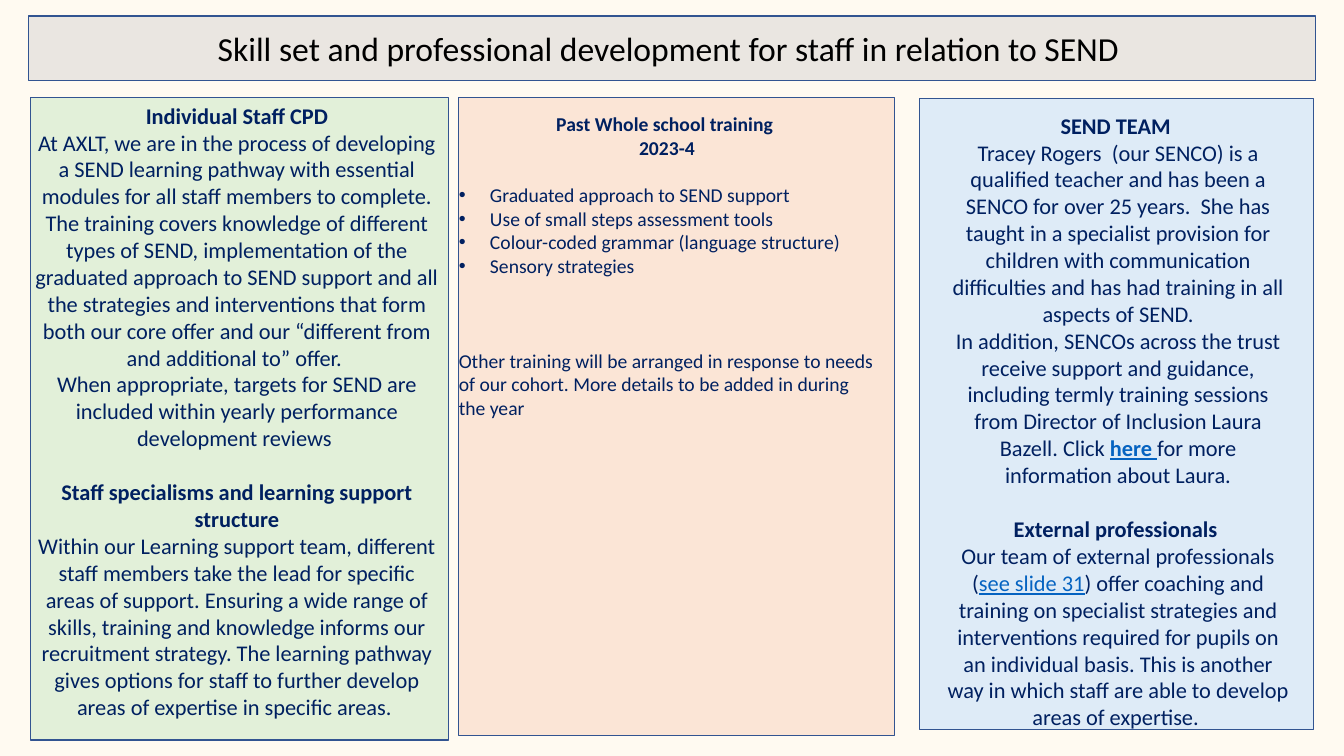
"""Build the SEND staff skills and professional development slide."""
from dataclasses import dataclass

from lxml.etree import SubElement
from pptx import Presentation
from pptx.dml.color import RGBColor as RGB
from pptx.enum.text import MSO_ANCHOR as Anchor, MSO_AUTO_SIZE as AutoSize, PP_ALIGN as Align
from pptx.oxml.ns import qn
from pptx.util import Inches, Pt


@dataclass(frozen=True)
class Theme:
    font: str = "Calibri"
    page: str = "FFFAF1"
    banner: str = "D0CECE"
    banner_alpha: int = 44
    border: str = "325491"
    border_pt: float = 1
    title_ink: str = "000000"
    ink: str = "002060"
    link: str = "0563C1"
    title_pt: int = 24
    line_height: float = 1.22


THEME = Theme()
HEAD, BODY, LIST, NOTE = "head", "body", "list", "note"

TITLE = "Skill set and professional development for staff in relation to SEND "
TITLE_BOX = (0.28, 0.16, 12.77, 0.64)

CPD = [
    (HEAD, 0, ["Individual Staff CPD"]),
    (BODY, 0, ["At AXLT, we are in the process of developing a SEND learning pathway with "
               "essential modules for all staff members to complete. The training covers "
               "knowledge of different types of SEND, implementation of the graduated approach "
               "to SEND support and all the strategies and interventions that form both our "
               "core offer and our “different from and additional to” offer. "]),
    (BODY, 0, ["When appropriate, targets for SEND are included within yearly performance "
               "development reviews "]),
    (HEAD, 1, ["Staff specialisms and learning support structure"]),
    (BODY, 0, ["Within our Learning support team, different staff members take the lead for "
               "specific areas of support. Ensuring a wide range of skills, training and "
               "knowledge informs our recruitment strategy. The learning pathway gives options "
               "for staff to further develop areas of expertise in specific areas. "]),
]
TRAINING = [
    (HEAD, 0, ["Past Whole school training "]),
    (HEAD, 0, ["2023-4"]),
    (LIST, 1, ["Graduated approach to SEND support"]),
    (LIST, 0, ["Use of small steps assessment tools"]),
    (LIST, 0, ["Colour-coded grammar (language structure)"]),
    (LIST, 0, ["Sensory strategies"]),
    (NOTE, 3, ["Other training will be arranged in response to needs of our cohort. More "
               "details to be added in during the year"]),
]
TEAM = [
    (HEAD, 0, ["SEND TEAM "]),
    (BODY, 0, ["Tracey Rogers  (our SENCO) is a qualified teacher and has been a SENCO for over "
               "25 years.  She has taught in a specialist provision for children with "
               "communication difficulties and has had training in all aspects of SEND."]),
    (BODY, 0, ["In addition, SENCOs across the trust receive support and guidance, including "
               "termly training sessions from Director of Inclusion Laura Bazell. Click ",
               ("here ", True), "for more information about Laura."]),
    (HEAD, 1, ["External professionals "]),
    (BODY, 0, ["Our team of external professionals (", ("see slide 31", False),
               ") offer coaching and training on specialist strategies and interventions "
               "required for pupils on an individual basis. This is another way in which staff "
               "are able to develop areas of expertise. "]),
]
PANELS = [
    dict(box=(0.3, 0.97, 4.15, 6.37), insets=(0.04, 0.04, 0.09), fill="E2F0D9", size=16, text=CPD),
    dict(box=(4.55, 0.97, 4.32, 6.33), insets=(0, 0.14, 0.19), fill="FBE5D6", size=14,
         text=TRAINING),
    dict(box=(9.12, 0.98, 3.91, 6.26), insets=(0.26, 0.13, 0.23), fill="DEEBF7", size=16,
         text=TEAM),
]


def style_box(sp, box, fill, anchor, insets):
    """Place a placeholder and give it fill, border and text margins."""
    sp.left, sp.top, sp.width, sp.height = map(Inches, box)
    sp.fill.solid()
    sp.fill.fore_color.rgb = RGB.from_string(fill)
    sp.line.color.rgb = RGB.from_string(THEME.border)
    sp.line.width = Pt(THEME.border_pt)
    tf = sp.text_frame
    tf.word_wrap, tf.auto_size, tf.vertical_anchor = True, AutoSize.NONE, anchor
    tf.margin_left, tf.margin_top, tf.margin_right = map(Inches, insets)
    tf.margin_bottom = 0
    return tf


def style_run(r, size, color, bold=False, underline=False):
    """Set the font of a run."""
    f = r.font
    f.name, f.size, f.bold, f.underline = THEME.font, Pt(size), bold, underline
    f.color.rgb = RGB.from_string(color)


def set_bullet(p, bulleted):
    """Switch the bullet and hanging indent of a paragraph on or off."""
    pPr = p._p.get_or_add_pPr()
    hang = Inches(0.31) if bulleted else 0
    pPr.set("marL", str(hang))
    pPr.set("indent", str(-hang))
    if bulleted:
        SubElement(pPr, qn("a:buFont")).set("typeface", "Arial")
        SubElement(pPr, qn("a:buChar")).set("char", "•")
    else:
        SubElement(pPr, qn("a:buNone"))


def add_title(sp):
    """Fill the title banner."""
    tf = style_box(sp, TITLE_BOX, THEME.banner, Anchor.MIDDLE, (0.1, 0, 0.1))
    color = sp._element.spPr.find(qn("a:solidFill"))[0]
    SubElement(color, qn("a:alpha")).set("val", str(THEME.banner_alpha * 1000))
    tf.text = TITLE
    p = tf.paragraphs[0]
    p.alignment = Align.CENTER
    style_run(p.runs[0], THEME.title_pt, THEME.title_ink)


def add_panel(sp, box, insets, fill, size, text):
    """Fill one column panel with its paragraphs."""
    tf = style_box(sp, box, fill, Anchor.TOP, insets)
    for i, (kind, gap_lines, runs) in enumerate(text):
        p = tf.add_paragraph() if i else tf.paragraphs[0]
        set_bullet(p, kind == LIST)
        p.alignment = Align.CENTER if kind in (HEAD, BODY) else Align.LEFT
        p.space_before = Pt(round(gap_lines * size * THEME.line_height, 1))
        for item in runs:
            r = p.add_run()
            if isinstance(item, tuple):
                r.text, bold = item
                style_run(r, size, THEME.link, bold, True)
            else:
                r.text = item
                style_run(r, size, THEME.ink, kind == HEAD)


def main():
    """Assemble and save the slide."""
    prs = Presentation()
    prs.slide_width, prs.slide_height = Inches(13.33), Inches(7.5)
    s = prs.slides.add_slide(prs.slide_layouts.get_by_name("Comparison"))
    s.background.fill.solid()
    s.background.fill.fore_color.rgb = RGB.from_string(THEME.page)
    title, *bodies = s.placeholders
    add_title(title)
    for sp, panel in zip(bodies, PANELS):
        add_panel(sp, **panel)
    for sp in bodies[len(PANELS):]:
        sp._element.getparent().remove(sp._element)
    prs.save("out.pptx")


if __name__ == "__main__":
    main()
